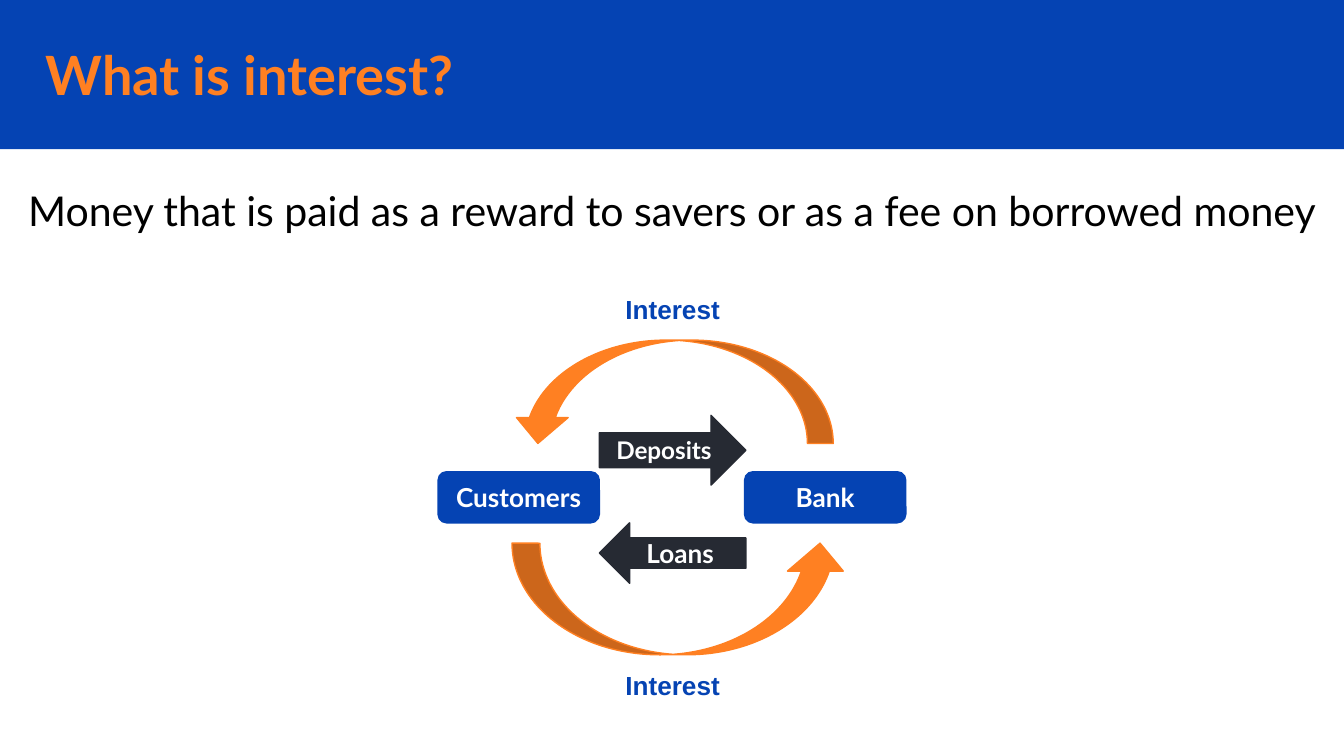
from dataclasses import dataclass

from pptx import Presentation
from pptx.dml.color import RGBColor
from pptx.enum.shapes import MSO_SHAPE
from pptx.enum.text import MSO_ANCHOR, PP_ALIGN
from pptx.oxml.ns import qn
from pptx.util import Pt

RECTANGLE = MSO_SHAPE.RECTANGLE
ROUNDED = MSO_SHAPE.ROUNDED_RECTANGLE
RIGHT_ARROW = MSO_SHAPE.RIGHT_ARROW
LEFT_ARROW = MSO_SHAPE.LEFT_ARROW
CURVED_ARROW = MSO_SHAPE.CURVED_DOWN_ARROW
TOP, MIDDLE = MSO_ANCHOR.TOP, MSO_ANCHOR.MIDDLE
LEFT, CENTER = PP_ALIGN.LEFT, PP_ALIGN.CENTER

BLUE, ORANGE, DARK = "0543B3", "FF8022", "262A33"
WHITE, BLACK = "FFFFFF", "000000"
WIDTH, HEIGHT = 720, 405
INSET = 7.2


@dataclass(frozen=True)
class Box:
    left: float
    top: float
    width: float
    height: float

    def lengths(self) -> list:
        return [Pt(v) for v in (self.left, self.top, self.width, self.height)]


@dataclass(frozen=True)
class Label:
    text: str
    size: float
    color: str = WHITE
    font: str = "Lato"
    bold: bool = True
    align: PP_ALIGN = CENTER
    anchor: MSO_ANCHOR = MIDDLE


@dataclass(frozen=True)
class Block:
    kind: MSO_SHAPE
    box: Box
    color: str
    label: Label


def paint(color_format, color: str) -> None:
    color_format.rgb = RGBColor.from_string(color)


def write(shape, label: Label) -> None:
    frame = shape.text_frame
    frame.word_wrap = True
    frame.vertical_anchor = label.anchor
    frame.margin_left = frame.margin_right = Pt(INSET)
    frame.margin_top = frame.margin_bottom = Pt(INSET)
    paragraph = frame.paragraphs[0]
    paragraph.alignment = label.align
    run = paragraph.add_run()
    run.text = label.text
    run.font.name = label.font
    run.font.size = Pt(label.size)
    run.font.bold = label.bold
    paint(run.font.color, label.color)


def add_figure(slide, kind: MSO_SHAPE, box: Box, color: str):
    figure = slide.shapes.add_shape(kind, *box.lengths())
    figure.shadow.inherit = False
    figure.fill.solid()
    paint(figure.fill.fore_color, color)
    figure.line.width = Pt(0.75)
    paint(figure.line.color, color)
    return figure


def add_block(slide, block: Block) -> None:
    write(add_figure(slide, block.kind, block.box, block.color), block.label)


def add_interest_arrow(slide, box: Box, rotation: float) -> None:
    arrow = add_figure(slide, CURVED_ARROW, box, ORANGE)
    arrow.rotation = rotation
    for adjustment, value in enumerate((0.25, 0.5, 0.25)):
        arrow.adjustments[adjustment] = value
    arrow._element.spPr.find(qn("a:xfrm")).set("flipH", "1")


def add_text(slide, box: Box, label: Label) -> None:
    write(slide.shapes.add_textbox(*box.lengths()), label)


def main() -> None:
    deck = Presentation()
    deck.slide_width, deck.slide_height = Pt(WIDTH), Pt(HEIGHT)
    slide = deck.slides.add_slide(deck.slide_layouts[6])

    banner = add_figure(slide, RECTANGLE, Box(0, 0, WIDTH, 80), BLUE)
    banner.line.fill.background()

    party_width, party_height, party_top = 86.4, 27.4, 252.7
    customers_left, bank_left = 234.7, 398.9
    flow_left, flow_width = customers_left + party_width, 78.5
    cycle_left, cycle_width = 274.3, 172.1

    add_interest_arrow(slide, Box(cycle_left, 182.2, cycle_width, 55.4), 0)
    add_interest_arrow(slide, Box(cycle_left, 291, 180, 59.8), 180)

    for name, left in (("Customers", customers_left), ("Bank", bank_left)):
        box = Box(left, party_top, party_width, party_height)
        add_block(slide, Block(ROUNDED, box, BLUE, Label(name, 14)))

    for kind, top, height, label in (
        (RIGHT_ARROW, 222.5, 37.4, Label("Deposits", 13)),
        (LEFT_ARROW, 280.1, 32.4, Label("Loans", 14)),
    ):
        box = Box(flow_left, top, flow_width, height)
        add_block(slide, Block(kind, box, DARK, label))

    interest = Label("Interest", 14, BLUE, "Arial", anchor=TOP)
    for top in (149.8, 351.4):
        add_text(slide, Box(cycle_left, top, cycle_width, 31.7), interest)

    definition = Label(
        "Money that is paid as a reward to savers or as a fee on borrowed money",
        22, BLACK, bold=False, anchor=TOP,
    )
    add_text(slide, Box(0, 92.2, WIDTH, 41), definition)
    title = Label("What is interest?", 29, ORANGE, align=LEFT)
    add_text(slide, Box(17.3, 19.4, 609, 40.3), title)

    deck.save("out.pptx")


if __name__ == "__main__":
    main()
